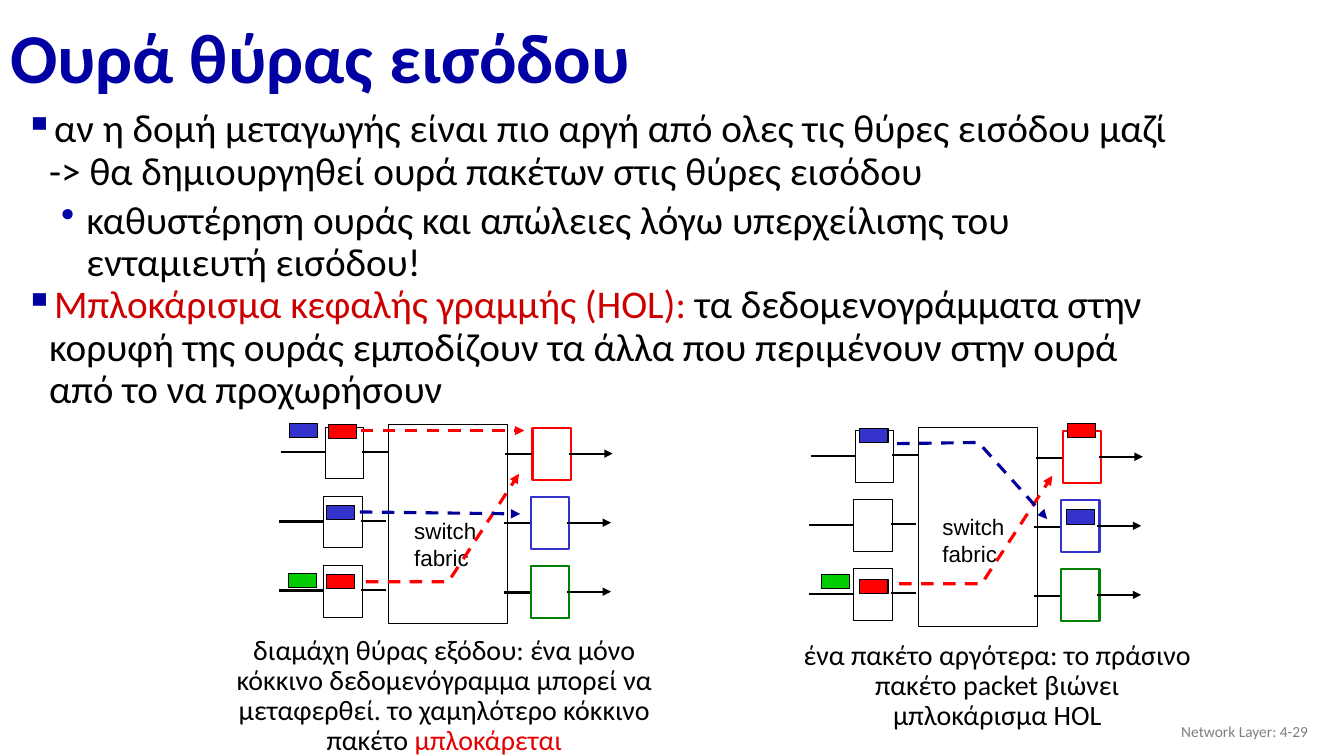
from lxml.etree import SubElement
from pptx import Presentation
from pptx.dml.color import RGBColor
from pptx.enum.dml import MSO_LINE_DASH_STYLE as Dash
from pptx.enum.shapes import MSO_CONNECTOR as Connector, MSO_SHAPE as Preset
from pptx.enum.text import MSO_ANCHOR as Anchor, MSO_AUTO_SIZE as AutoSize, PP_ALIGN as Align
from pptx.oxml.ns import qn
from pptx.util import Cm, Pt

COLORS = {
    "title": "0000A3", "sub_bullet": "0000A8", "term": "CC0000", "blocked": "E40000",
    "footer": "7F7F7F", "black": "000000", "white": "FFFFFF",
    "red": "FF0000", "blue": "3333CC", "green": "00CC00",
    "green_port": "008000", "blue_path": "000099",
}

PORT = (0.97, 1.3)
PACKET = (0.71, 0.36)
ROW_PITCH = 1.74
TOP_ROW_SHIFT = 0.04

# Per diagram, in cm: fabric corner, label corner, packets and dashed paths
CONTENTION = {
    "fabric": (9.78, 10.69),
    "label": (10.19, 12.9),
    "packets": [("red", 8.28, 10.69), ("blue", 8.23, 12.73), ("red", 8.23, 14.48),
                ("blue", 7.29, 10.67), ("green", 7.26, 14.45)],
    "paths": [("red", [(9.09, 10.85), (13.21, 10.85)]),
              ("red", [(9.22, 14.66), (11.3, 14.66), (13.08, 11.94)]),
              ("blue_path", [(9.07, 12.9), (13.11, 12.95)])],
}
ONE_PACKET_LATER = {
    "fabric": (23.14, 10.77),
    "label": (23.5, 12.8),
    "packets": [("red", 26.9, 10.67), ("blue", 21.67, 10.8), ("red", 21.67, 14.6),
                ("green", 20.7, 14.48), ("blue", 26.87, 12.85)],
    "paths": [("red", [(22.66, 14.71), (24.74, 14.71), (26.52, 11.99)]),
              ("blue_path", [(22.61, 11.18), (24.66, 11.15), (26.39, 13.08)])],
}


def rgb(name):
    return RGBColor.from_string(COLORS[name])


def set_font(font, size, color, name="Calibri", bold=False):
    font.name, font.size, font.bold = name, Pt(size), bold
    font.color.rgb = rgb(color)


def add_text(shapes, left, top, width, height, paragraphs, size, color="black",
             align=Align.LEFT, spacing=0.9, name="Calibri"):
    """Each paragraph is a list of (text, color or None) spans."""
    box = shapes.add_textbox(Cm(left), Cm(top), Cm(width), Cm(height))
    frame = box.text_frame
    frame.word_wrap = True
    for index, spans in enumerate(paragraphs):
        para = frame.paragraphs[0] if index == 0 else frame.add_paragraph()
        para.alignment, para.line_spacing = align, spacing
        set_font(para.font, size, color, name)
        for text, span_color in spans:
            span = para.add_run()
            span.text = text
            if span_color:
                span.font.color.rgb = rgb(span_color)
    return frame


def add_bullet(para, mark, color, margin, indent):
    props = para._p.get_or_add_pPr()
    props.set("marL", str(Cm(margin)))
    props.set("indent", str(Cm(indent)))
    default_font = props.find(qn("a:defRPr"))
    bullet_color = SubElement(props, qn("a:buClr"))
    SubElement(bullet_color, qn("a:srgbClr"), val=COLORS[color])
    bullet = SubElement(props, qn("a:buChar"), char=mark)
    default_font.addprevious(bullet_color)
    default_font.addprevious(bullet)


def add_rect(shapes, left, top, size, fill="white", line="black", weight=0.75):
    rect = shapes.add_shape(Preset.RECTANGLE, Cm(left), Cm(top), Cm(size[0]), Cm(size[1]))
    rect.shadow.inherit = False
    rect.fill.solid()
    rect.fill.fore_color.rgb = rgb(fill)
    rect.line.color.rgb = rgb(line)
    rect.line.width = Pt(weight)


def style_line(shape, color, weight, dashed, arrow):
    shape.line.color.rgb = rgb(color)
    shape.line.width = Pt(weight)
    if dashed:
        shape.line.dash_style = Dash.DASH
    if arrow:
        SubElement(shape.line._get_or_add_ln(), qn("a:tailEnd"), type="triangle")


def add_line(shapes, start, end, color="black", weight=1.5, dashed=False, arrow=False):
    line = shapes.add_connector(Connector.STRAIGHT, *(Cm(value) for value in (*start, *end)))
    style_line(line, color, weight, dashed, arrow)
    SubElement(line._element.spPr, qn("a:effectLst"))


def add_packet_path(shapes, color, points):
    if len(points) == 2:
        add_line(shapes, *points, color, 2.25, dashed=True, arrow=True)
        return
    start, *rest = [(Cm(x), Cm(y)) for x, y in points]
    builder = shapes.build_freeform(*start)
    builder.add_line_segments(rest, close=False)
    path = builder.convert_to_shape()
    path.shadow.inherit = False
    path.fill.background()
    style_line(path, color, 2.25, dashed=True, arrow=True)


def add_switch(page, diagram):
    shapes = page.shapes.add_group_shape().shapes
    left, top = diagram["fabric"]
    add_rect(shapes, left, top, (3, 5.03))

    # Ports and links, one row per input/output pair
    for row, port_color in enumerate(("red", "blue", "green_port")):
        x = left + (TOP_ROW_SHIFT if row == 0 else 0)
        y = top + row * ROW_PITCH
        add_rect(shapes, x - 1.62, y + 0.08, PORT)
        add_rect(shapes, x + 3.6, y + 0.1, PORT, line=port_color, weight=1.5)
        for begin, end, drop, arrow in ((2.92, 3.58, 0.76, False), (-0.69, -0.05, 0.69, False),
                                        (-2.75, -1.64, 0.71, False), (4.51, 5.62, 0.74, True)):
            add_line(shapes, (x + begin, y + drop), (x + end, y + drop), arrow=arrow)

    # Packets, label and paths
    for color, packet_left, packet_top in diagram["packets"]:
        add_rect(shapes, packet_left, packet_top, PACKET, fill=color)
    add_text(shapes, *diagram["label"], 2.08, 1.63, [[("switch", None)], [("fabric", None)]],
             16, spacing=1, name="Arial")
    for color, points in diagram["paths"]:
        add_packet_path(shapes, color, points)


def add_title(page, text):
    title = page.shapes.title
    title.left, title.top, title.width, title.height = Cm(0), Cm(0.3), Cm(29.21), Cm(2.49)
    frame = title.text_frame
    frame.text = text
    frame.auto_size, frame.vertical_anchor = AutoSize.NONE, Anchor.MIDDLE
    para = frame.paragraphs[0]
    para.alignment, para.line_spacing = Align.LEFT, 0.9
    set_font(para.font, 50, "title", bold=True)


def main():
    deck = Presentation()
    deck.slide_width, deck.slide_height = Cm(33.87), Cm(19.05)
    page = deck.slides.add_slide(deck.slide_layouts[5])
    add_title(page, "Ουρά θύρας εισόδου")

    # Bulleted text
    queueing = add_text(page.shapes, 0, 2.62, 29.82, 3.76, [
        [("αν η δομή μεταγωγής είναι πιο αργή από ολες τις θύρες εισόδου μαζί "
          "-> θα δημιουργηθεί ουρά πακέτων στις θύρες εισόδου", None)],
        [("καθυστέρηση ουράς και απώλειες λόγω υπερχείλισης του ενταμιευτή εισόδου!", None)],
    ], 28)
    main_point, sub_point = queueing.paragraphs
    sub_point.level = 1
    sub_point.space_before = Pt(5)
    add_bullet(main_point, "▪", "title", 0.99, -0.61)
    add_bullet(sub_point, "•", "sub_bullet", 1.93, -0.64)
    blocking = add_text(page.shapes, 0, 7.06, 30.07, 3.2, [
        [("Μπλοκάρισμα κεφαλής γραμμής (HOL): ", "term"),
         ("τα δεδομενογράμματα στην κορυφή της ουράς εμποδίζουν τα άλλα "
          "που περιμένουν στην ουρά από το να προχωρήσουν", None)],
    ], 28)
    add_bullet(blocking.paragraphs[0], "▪", "title", 0.99, -0.61)

    # Switch diagrams
    for diagram in (CONTENTION, ONE_PACKET_LATER):
        add_switch(page, diagram)

    # Captions
    add_text(page.shapes, 5, 15.9, 12.4, 3.33, [
        [("διαμάχη θύρας εξόδου: ένα μόνο κόκκινο δεδομενόγραμμα μπορεί να μεταφερθεί. "
          "το χαμηλότερο κόκκινο πακέτο ", None), ("μπλοκάρεται", "blocked")],
    ], 20, align=Align.CENTER)
    add_text(page.shapes, 19.84, 16.03, 10.59, 2.64, [
        [("ένα πακέτο αργότερα: το πράσινο πακέτο packet βιώνει μπλοκάρισμα HOL", None)],
    ], 20, align=Align.CENTER)

    # Footer
    footer = add_text(page.shapes, 25.6, 17.91, 7.62, 1.02, [[("Network Layer: 4-29", None)]],
                      11, "footer", Align.RIGHT, spacing=1)
    footer.vertical_anchor = Anchor.MIDDLE
    deck.save("out.pptx")


if __name__ == "__main__":
    main()
